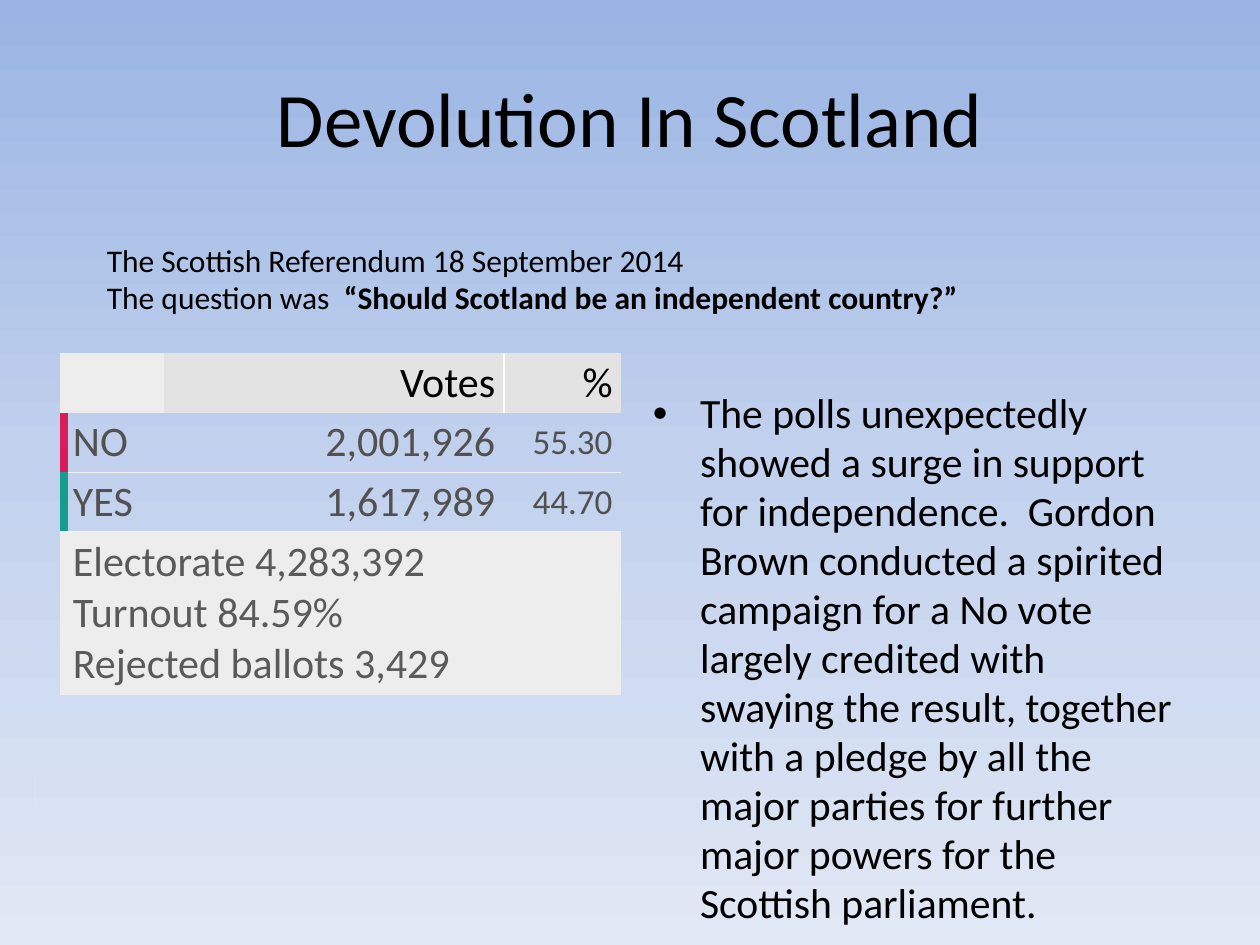
from copy import deepcopy

from lxml import etree
from pptx import Presentation
from pptx.dml.color import RGBColor
from pptx.enum.shapes import MSO_SHAPE
from pptx.enum.text import MSO_ANCHOR, MSO_AUTO_SIZE, PP_ALIGN
from pptx.oxml.ns import qn
from pptx.util import Pt

LEFT, RIGHT, CENTER = PP_ALIGN.LEFT, PP_ALIGN.RIGHT, PP_ALIGN.CENTER
TOP, MIDDLE = MSO_ANCHOR.TOP, MSO_ANCHOR.MIDDLE
NO_STYLE = "{2D5ABB26-0587-4C30-8999-92F81FD0307C}"

THEME = {
    "font": "Calibri",
    "title": 44, "body": 23.8, "intro": 18, "table": 24, "percent": 20,
    "black": "000000", "white": "FFFFFF", "votes": "515151", "totals": "5A5A5A",
    "header": "E3E3E3", "panel": "EDEDED", "rule": "F0F0F0",
    "no": "DA1C5C", "yes": "169D8E",
    "sky": [(0, "9AB5E4"), (0.5, "C2D1ED"), (1, "E1E8F5")],
}


def style(p, size, color="black", align=LEFT):
    p.alignment = align
    p.font.name = THEME["font"]
    p.font.size = Pt(THEME[size])
    p.font.color.rgb = RGBColor.from_string(THEME[color])


def border(cell, side, color, width):
    ln = etree.SubElement(cell._tc.get_or_add_tcPr(), qn("a:ln" + side), w=str(Pt(width)))
    fill = etree.SubElement(ln, qn("a:solidFill"))
    etree.SubElement(fill, qn("a:srgbClr"), val=THEME[color])


prs = Presentation()
prs.slide_width, prs.slide_height = Pt(720), Pt(540)
s = prs.slides.add_slide(prs.slide_layouts[1])
title, body = s.placeholders

# Background gradient, from top to bottom
bg = s.background.fill
bg.gradient()
bg.gradient_angle = 270
stops = s._element.find(".//" + qn("a:gsLst"))
stops.append(deepcopy(stops[-1]))
for stop, (position, color) in zip(bg.gradient_stops, THEME["sky"]):
    stop.position = position
    stop.color.rgb = RGBColor.from_string(color)

# Title
title.left, title.top, title.width, title.height = Pt(36), Pt(21.6), Pt(648), Pt(90)
tf = title.text_frame
tf.text = "Devolution In Scotland"
tf.vertical_anchor = MIDDLE
style(tf.paragraphs[0], "title", align=CENTER)

# Referendum results: text, size, colour and alignment by column
rows = [
    ["", "Votes", "%"],
    ["NO", "2,001,926", "55.30"],
    ["YES", "1,617,989", "44.70"],
    ["Electorate 4,283,392\nTurnout 84.59%\nRejected ballots 3,429", "", ""],
]
edges = ["panel", "no", "yes", "panel"]
widths = [56.9, 194.4, 67]
heights = [34, 34, 34, 93]
table = s.shapes.add_table(4, 3, Pt(36.7), Pt(202), Pt(sum(widths)), Pt(sum(heights))).table
table._tbl.tblPr.find(qn("a:tableStyleId")).text = NO_STYLE
table.first_row = table.horz_banding = False
for column, width in zip(table.columns, widths):
    column.width = Pt(width)
for row, height in zip(table.rows, heights):
    row.height = Pt(height)
table.cell(3, 0).merge(table.cell(3, 2))

for i, texts in enumerate(rows):
    for j, text in enumerate(texts):
        cell = table.cell(i, j)
        cell.vertical_anchor = MIDDLE
        cell.margin_left = cell.margin_right = Pt(5)
        cell.margin_top = cell.margin_bottom = Pt(2.2)

        # Borders come before the fill
        if j == 0:
            border(cell, "L", edges[i], 5.25)
        elif i == 0 and j == 2:
            border(cell, "L", "white", 0.75)
        if i == 0 and j == 1:
            border(cell, "R", "white", 0.75)
        if i >= 2:
            border(cell, "T", "rule", 0.75)
        if i in (1, 2):
            border(cell, "B", "rule", 0.75)
            cell.fill.background()
        else:
            cell.fill.solid()
            shade = "header" if i == 0 and j > 0 else "panel"
            cell.fill.fore_color.rgb = RGBColor.from_string(THEME[shade])

        if text:
            cell.text = text
            size = "percent" if j == 2 and i > 0 else "table"
            color = ["black", "votes", "votes", "totals"][i]
            for p in cell.text_frame.paragraphs:
                style(p, size, color, RIGHT if j else LEFT)

# Commentary bullet
body.left, body.top, body.width, body.height = Pt(365.8), Pt(218.9), Pt(318.2), Pt(263.5)
tf = body.text_frame
tf.text = (
    "The polls unexpectedly showed a surge in support for independence.  "
    "Gordon Brown conducted a spirited campaign for a No vote largely credited "
    "with swaying the result, together with a pledge by all the major parties "
    "for further major powers for the Scottish parliament."
)
tf.auto_size = MSO_AUTO_SIZE.NONE
tf.vertical_anchor = TOP
p = tf.paragraphs[0]
style(p, "body")
p.line_spacing = 0.98

# Thin white mark at the lower left
mark = s.shapes.add_shape(MSO_SHAPE.RECTANGLE, Pt(20.2), Pt(441.4), Pt(0.1), Pt(21.6))
mark.shadow.inherit = False
mark.fill.solid()
mark.fill.fore_color.rgb = RGBColor.from_string(THEME["white"])
mark.line.fill.background()

# Referendum question
tf = s.shapes.add_textbox(Pt(54), Pt(133.9), Pt(578.2), Pt(72.7)).text_frame
tf.word_wrap = True
tf.text = "The Scottish Referendum 18 September 2014\nThe question was  "
r = tf.paragraphs[1].add_run()
r.text = "“Should Scotland be an independent country?”"
r.font.bold = True
for p in tf.paragraphs:
    style(p, "intro")

prs.save("out.pptx")
